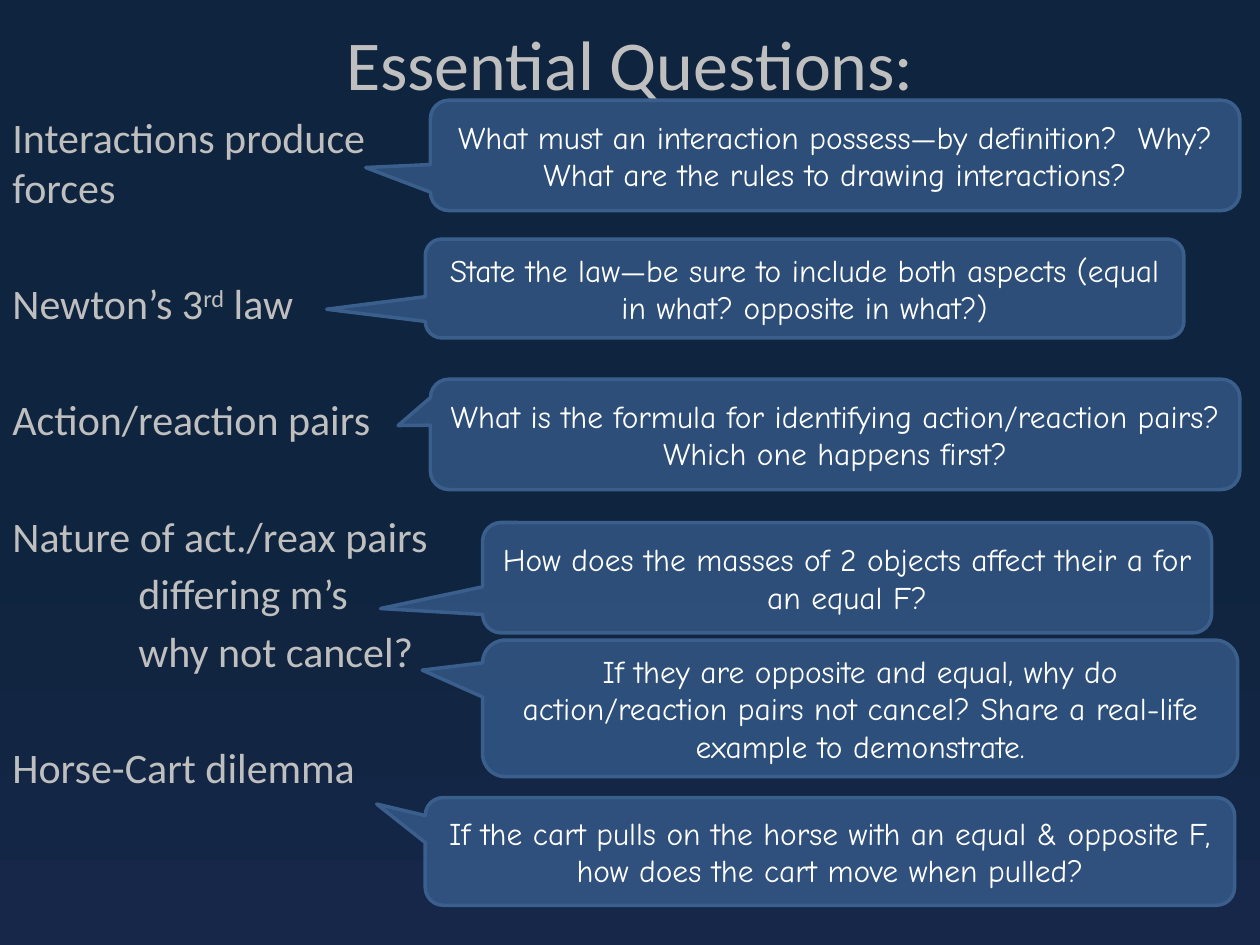
from lxml import etree
from pptx import Presentation
from pptx.dml.color import RGBColor
from pptx.enum import shapes, text
from pptx.oxml.ns import qn
from pptx.util import Pt

COLOURS = {
    "night": "0F243E",
    "dusk": "162749",
    "grey": "BFBFBF",
    "bubble": "4F81BD",
    "outline": "3A5F8C",
    "white": "FFFFFF",
}
BUBBLE_OPACITY = 46
TITLE = "Essential Questions:"

LINE_GAP, TOPIC_GAP, SUBTOPIC_INDENT = 4.2, 37.6, 72

# (parts as (text, superscript), space before, indent)
TOPICS = [
    ([("Interactions produce forces", False)], 0, 0),
    ([("Newton’s 3", False), ("rd", True), (" law", False)], TOPIC_GAP, 0),
    ([("Action/reaction pairs", False)], TOPIC_GAP, 0),
    ([("Nature of act./reax pairs", False)], TOPIC_GAP, 0),
    ([("differing m’s", False)], LINE_GAP, SUBTOPIC_INDENT),
    ([("why not cancel?", False)], LINE_GAP, SUBTOPIC_INDENT),
    ([("Horse-Cart dilemma", False)], TOPIC_GAP, 0),
]

# (paragraphs, (left, top, width, height), pointer tip relative to the centre)
QUESTIONS = [
    (["What must an interaction possess—by definition?  Why?",
      "What are the rules to drawing interactions?"],
     (246, 57.3, 462.5, 63), (-0.58, 0.11)),
    (["State the law—be sure to include both aspects (equal in what? "
      "opposite in what?)"],
     (243, 136.6, 433.5, 56.5), (-0.63, 0.21)),
    (["What is the formula for identifying action/reaction pairs?",
      "Which one happens first?"],
     (246, 216.7, 462.5, 63), (-0.54, -0.08)),
    (["How does the masses of 2 objects affect their a for an equal F?"],
     (275.8, 298.6, 416.5, 63), (-0.64, 0.28)),
    (["If they are opposite and equal, why do action/reaction pairs not "
      "cancel? Share a real-life example to demonstrate."],
     (275.8, 365.8, 431.5, 78), (-0.58, -0.28)),
    (["If the cart pulls on the horse with an equal & opposite F, how does "
      "the cart move when pulled?"],
     (243, 455.8, 462.5, 61.5), (-0.56, -0.44)),
]

TITLE_FONT = {"name": "Calibri", "size": Pt(40)}
TOPIC_FONT = {"name": "Calibri", "size": Pt(24)}
QUESTION_FONT = {"name": "Comic Neue", "size": Pt(18)}


def colour(key):
    return RGBColor.from_string(COLOURS[key])


def set_font(font, values, key):
    for attribute, value in values.items():
        setattr(font, attribute, value)
    font.color.rgb = colour(key)


def paint_background(slide):
    fill = slide.background.fill
    fill.gradient()
    fill.gradient_angle = 270
    for stop, (key, position) in zip(fill.gradient_stops,
                                     [("night", 0.55), ("dusk", 1)]):
        stop.color.rgb = colour(key)
        stop.position = position


def write_title(slide):
    title = slide.shapes.title
    place = {"left": 0, "top": 0, "width": Pt(720), "height": Pt(72)}
    for attribute, value in place.items():
        setattr(title, attribute, value)
    title.text_frame.text = TITLE
    title.text_frame.vertical_anchor = text.MSO_ANCHOR.MIDDLE
    heading = title.text_frame.paragraphs[0]
    heading.alignment = text.PP_ALIGN.CENTER
    set_font(heading.runs[0].font, TITLE_FONT, "grey")


def write_topics(slide):
    frame = slide.shapes.add_textbox(0, Pt(60), Pt(264), Pt(380)).text_frame
    frame.word_wrap = True
    for number, (parts, gap, indent) in enumerate(TOPICS):
        topic = frame.add_paragraph() if number else frame.paragraphs[0]
        topic.space_before = Pt(gap)
        topic._p.get_or_add_pPr().set("marL", str(Pt(indent)))
        for words, superscript in parts:
            run = topic.add_run()
            run.text = words
            set_font(run.font, TOPIC_FONT, "grey")
            if superscript:
                run._r.get_or_add_rPr().set("baseline", "30000")


def add_question(slide, paragraphs, place, tip):
    bubble = slide.shapes.add_shape(
        shapes.MSO_SHAPE.ROUNDED_RECTANGULAR_CALLOUT, *map(Pt, place))
    bubble.adjustments[0], bubble.adjustments[1] = tip
    bubble.shadow.inherit = False
    bubble.fill.solid()
    bubble.fill.fore_color.rgb = colour("bubble")
    tint = bubble._element.spPr.find(f"{qn('a:solidFill')}/{qn('a:srgbClr')}")
    etree.SubElement(tint, qn("a:alpha"), val=str(BUBBLE_OPACITY * 1000))
    bubble.line.color.rgb = colour("outline")
    bubble.line.width = Pt(2)

    frame = bubble.text_frame
    frame.word_wrap = True
    frame.vertical_anchor = text.MSO_ANCHOR.MIDDLE
    frame.text = "\n".join(paragraphs)
    for question in frame.paragraphs:
        question.alignment = text.PP_ALIGN.CENTER
        set_font(question.runs[0].font, QUESTION_FONT, "white")


def main():
    deck = Presentation()
    deck.slide_width, deck.slide_height = Pt(720), Pt(540)
    slide = deck.slides.add_slide(deck.slide_layouts.get_by_name("Title Only"))
    paint_background(slide)
    write_title(slide)
    write_topics(slide)
    for question in QUESTIONS:
        add_question(slide, *question)
    deck.save("out.pptx")


if __name__ == "__main__":
    main()
